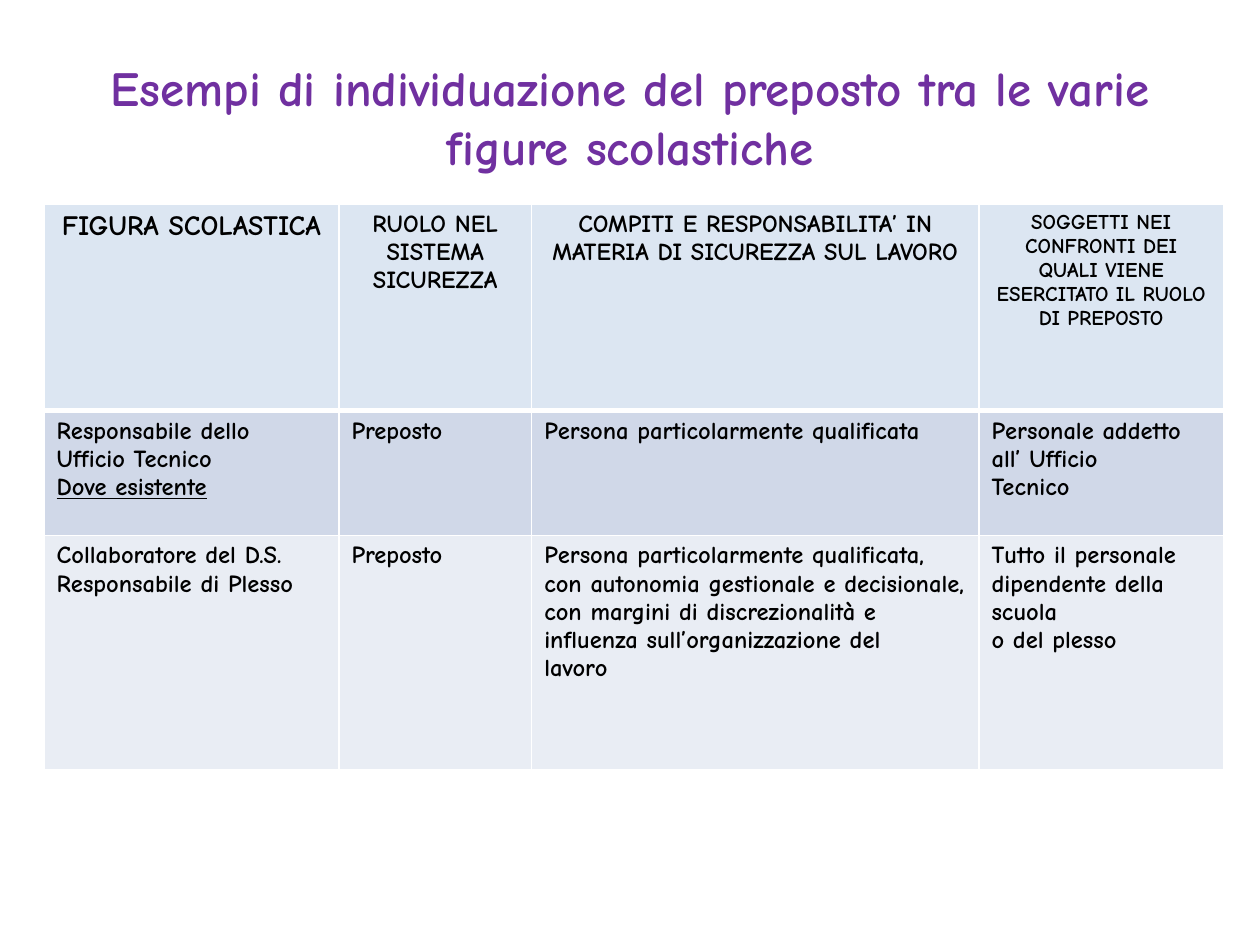
from dataclasses import dataclass

import pptx
import pptx.dml.color
import pptx.enum.text
import pptx.oxml.ns
import pptx.util
from lxml import etree
from pptx.util import Inches

FONT = "Comic Neue"
BLACK = "000000"
WHITE = "FFFFFF"
PURPLE = "7030A0"
CENTER = pptx.enum.text.PP_ALIGN.CENTER
LEFT = pptx.enum.text.PP_ALIGN.LEFT


@dataclass
class CellText:
    lines: list[str]
    size: int = 14
    underlined: str = ""


@dataclass
class Row:
    height: float
    fill: str
    cells: list[CellText]
    alignment: pptx.enum.text.PP_ALIGN = LEFT
    top_border: int = 1
    bottom_border: int = 1


COLUMN_WIDTHS = [2.34, 1.53, 3.55, 1.94]
ROWS = [
    Row(1.64, "DCE6F2", [
        CellText(["FIGURA SCOLASTICA"], size=16),
        CellText(["RUOLO NEL SISTEMA SICUREZZA"]),
        CellText(["COMPITI E RESPONSABILITA’ IN MATERIA DI SICUREZZA SUL LAVORO"]),
        CellText(["SOGGETTI NEI CONFRONTI DEI QUALI VIENE ESERCITATO IL RUOLO DI PREPOSTO"], size=12),
    ], alignment=CENTER, bottom_border=3),
    Row(0.99, "D0D8E8", [
        CellText(["Responsabile dello", "Ufficio Tecnico", "Dove esistente"], underlined="Dove esistente"),
        CellText(["Preposto"]),
        CellText(["Persona particolarmente qualificata"]),
        CellText(["Personale addetto all’ Ufficio", "Tecnico"]),
    ], top_border=3),
    Row(1.86, "E9EDF4", [
        CellText(["Collaboratore del D.S.", "Responsabile di Plesso"]),
        CellText(["Preposto"]),
        CellText(["Persona particolarmente qualificata, con autonomia gestionale e decisionale, "
                  "con margini di discrezionalità e influenza sull’organizzazione del", "lavoro"]),
        CellText(["Tutto il personale", "dipendente della scuola", "o del plesso"]),
    ]),
]


def color(value: str) -> pptx.dml.color.RGBColor:
    return pptx.dml.color.RGBColor.from_string(value)


def write_lines(frame, text: CellText, text_color: str, alignment) -> None:
    for index, line in enumerate(text.lines):
        paragraph = frame.paragraphs[0] if index == 0 else frame.add_paragraph()
        paragraph.alignment = alignment
        run = paragraph.add_run()
        run.text = line
        run.font.name = FONT
        run.font.size = pptx.util.Pt(text.size)
        run.font.bold = True
        run.font.underline = line == text.underlined
        run.font.color.rgb = color(text_color)


def add_border(cell, side: str, width: int) -> None:
    """Draw one white edge; side is L, R, T or B, and edges must be added in that order."""
    qn = pptx.oxml.ns.qn
    properties = cell._tc.get_or_add_tcPr()
    line = etree.SubElement(properties, qn(f"a:ln{side}"), w=str(pptx.util.Pt(width)))
    fill = etree.SubElement(line, qn("a:solidFill"))
    etree.SubElement(fill, qn("a:srgbClr"), val=WHITE)


def add_title(slide, text: str) -> None:
    box = slide.shapes.add_textbox(Inches(0.5), Inches(0.3), Inches(9), Inches(1.25))
    box.text_frame.word_wrap = True
    box.text_frame.vertical_anchor = pptx.enum.text.MSO_ANCHOR.MIDDLE
    write_lines(box.text_frame, CellText([text], size=28), PURPLE, CENTER)


def add_roles_table(slide) -> None:
    shape = slide.shapes.add_table(
        len(ROWS), len(COLUMN_WIDTHS), Inches(0.35), Inches(1.62),
        Inches(sum(COLUMN_WIDTHS)), Inches(sum(row.height for row in ROWS)))
    table = shape.table
    for column, width in zip(table.columns, COLUMN_WIDTHS):
        column.width = Inches(width)
    for table_row, row in zip(table.rows, ROWS):
        table_row.height = Inches(row.height)
        for cell, text in zip(table_row.cells, row.cells):
            borders = {"L": 1, "R": 1, "T": row.top_border, "B": row.bottom_border}
            for side, width in borders.items():
                add_border(cell, side, width)
            cell.fill.solid()
            cell.fill.fore_color.rgb = color(row.fill)
            write_lines(cell.text_frame, text, BLACK, row.alignment)


def main() -> None:
    presentation = pptx.Presentation()
    presentation.slide_width = Inches(10)
    presentation.slide_height = Inches(7.5)
    slide = presentation.slides.add_slide(presentation.slide_layouts[6])
    add_title(slide, "Esempi di individuazione del preposto tra le varie figure scolastiche")
    add_roles_table(slide)
    presentation.save("out.pptx")


if __name__ == "__main__":
    main()
